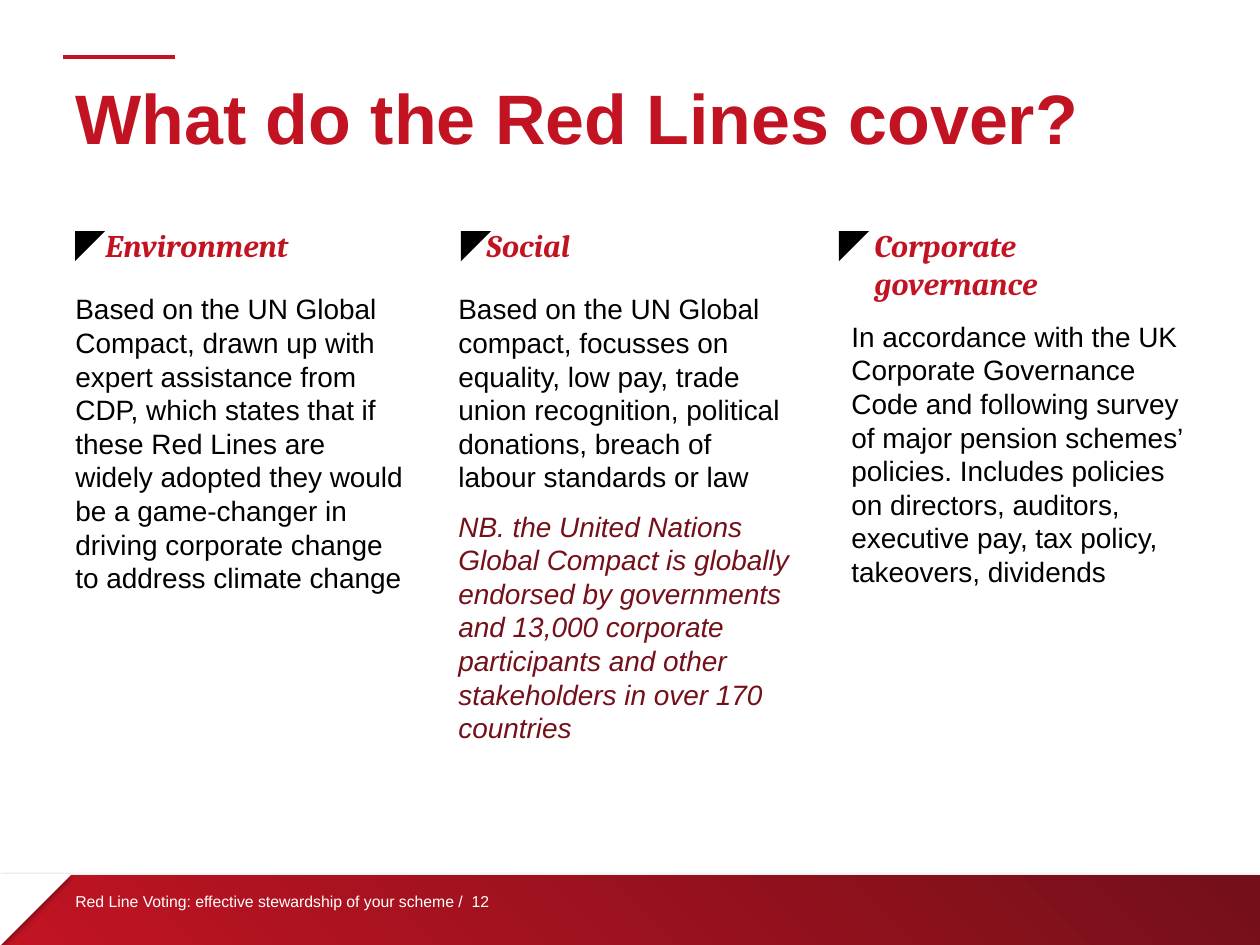
import pptx
import pptx.util
import pptx.dml.color
import pptx.enum.shapes
import pptx.enum.text
import pptx.oxml
import pptx.oxml.ns

SCALE = 914400 / 126  # EMU in one px
HUES = {"red": "C21323", "wine": "731019", "black": "000000", "white": "FFFFFF"}
SHAPE = pptx.enum.shapes.MSO_SHAPE
ANCHOR = pptx.enum.text.MSO_ANCHOR

# Left of column, left of marker, heading indent, heading, space before body, body, note
COLS = [
    (63, 75, 30, "Environment", 16,
     "Based on the UN Global Compact, drawn up with expert assistance from CDP, "
     "which states that if these Red Lines are widely adopted they would be a "
     "game-changer in driving corporate change to address climate change", None),
    (446, 461, 28, "Social", 16,
     "Based on the UN Global compact, focusses on equality, low pay, trade union "
     "recognition, political donations, breach of labour standards or law",
     "NB. the United Nations Global Compact is globally endorsed by governments "
     "and 13,000 corporate participants and other stakeholders in over 170 countries"),
    (839, 839, 23, "Corporate governance", 10,
     "In accordance with the UK Corporate Governance Code and following survey of "
     "major pension schemes’ policies. Includes policies on directors, auditors, "
     "executive pay, tax policy, takeovers, dividends", None),
]


def px(num):
    return pptx.util.Emu(round(num * SCALE))


def hue(name):
    return pptx.dml.color.RGBColor.from_string(HUES[name])


def add_run(para, text, size, color, face="Arial", bold=False, slant=False):
    run = para.add_run()
    run.text = text
    font = run.font
    font.name, font.size = face, pptx.util.Pt(size)
    font.bold, font.italic = bold, slant
    font.color.rgb = hue(color)


def add_box(slide, *rect):
    frame = slide.shapes.add_textbox(*map(px, rect)).text_frame
    frame.word_wrap = True
    return frame


def add_form(slide, kind, *rect, fill=None, turn=0):
    form = slide.shapes.add_shape(kind, *map(px, rect))
    form.rotation = turn
    form.shadow.inherit = False
    form.line.fill.background()
    if fill:
        form.fill.solid()
        form.fill.fore_color.rgb = hue(fill)
    return form


def add_shade(form):
    """Soft shadow falling straight down."""
    effect = form._element.spPr.find(pptx.oxml.ns.qn("a:effectLst"))
    effect.append(pptx.oxml.parse_xml(
        f'<a:outerShdw {pptx.oxml.ns.nsdecls("a")} blurRad="39370" dist="22860" '
        'dir="5400000" rotWithShape="0"><a:srgbClr val="000000">'
        '<a:alpha val="35000"/></a:srgbClr></a:outerShdw>'))


def add_band(slide):
    band = add_form(slide, SHAPE.RECTANGLE, 0, 875, 1260, 70)
    band.fill.gradient()
    band.fill.gradient_angle = 45
    for stop, name in zip(band.fill.gradient_stops, ("red", "wine")):
        stop.color.rgb = hue(name)
    add_shade(band)
    add_shade(add_form(slide, SHAPE.RIGHT_TRIANGLE, 0, 874, 72, 72,
                       fill="white", turn=90))


def add_rule(slide):
    kind = pptx.enum.shapes.MSO_CONNECTOR.STRAIGHT
    rule = slide.shapes.add_connector(kind, px(63), px(57), px(175), px(57))
    rule.line.color.rgb = hue("red")
    rule.line.width = pptx.util.Pt(2)
    rule._element.spPr.append(pptx.oxml.parse_xml(
        f'<a:effectLst {pptx.oxml.ns.nsdecls("a")}/>'))


def set_title(slide):
    title = slide.shapes.title
    title.left, title.top, title.width, title.height = map(px, (63, 38, 1134, 158))
    frame = title.text_frame
    frame.vertical_anchor = ANCHOR.MIDDLE
    para = frame.paragraphs[0]
    para.alignment = pptx.enum.text.PP_ALIGN.LEFT
    add_run(para, "What do the Red Lines cover?", 40, "red", bold=True)


def add_para(frame, text, gap, color, slant=False):
    para = frame.add_paragraph()
    para.space_before = pptx.util.Pt(gap)
    para.line_spacing = pptx.util.Pt(19.2)
    add_run(para, text, 16, color, slant=slant)


def add_col(slide, left, mark, indent, head, gap, body, note):
    frame = add_box(slide, left, 220, 358, 587)
    para = frame.paragraphs[0]
    para.line_spacing = pptx.util.Pt(21.6)
    para._p.get_or_add_pPr().set("marL", str(px(indent)))
    add_run(para, head, 18, "red", "Cambria", True, True)
    add_para(frame, body, gap, "black")
    if note:
        add_para(frame, note, 9, "wine", True)
    add_form(slide, SHAPE.RIGHT_TRIANGLE, mark, 231, 30, 30, fill="black", turn=90)


def main():
    deck = pptx.Presentation()
    deck.slide_width, deck.slide_height = px(1260), px(945)
    slide = deck.slides.add_slide(deck.slide_layouts[5])
    # Frame of the slide
    add_band(slide)
    add_rule(slide)
    set_title(slide)
    # Three topics
    for col in COLS:
        add_col(slide, *col)
    # Footer
    frame = add_box(slide, 63, 876, 766, 50)
    frame.vertical_anchor = ANCHOR.MIDDLE
    add_run(frame.paragraphs[0],
            "Red Line Voting: effective stewardship of your scheme /  12", 9, "white")
    deck.save("out.pptx")


if __name__ == "__main__":
    main()
